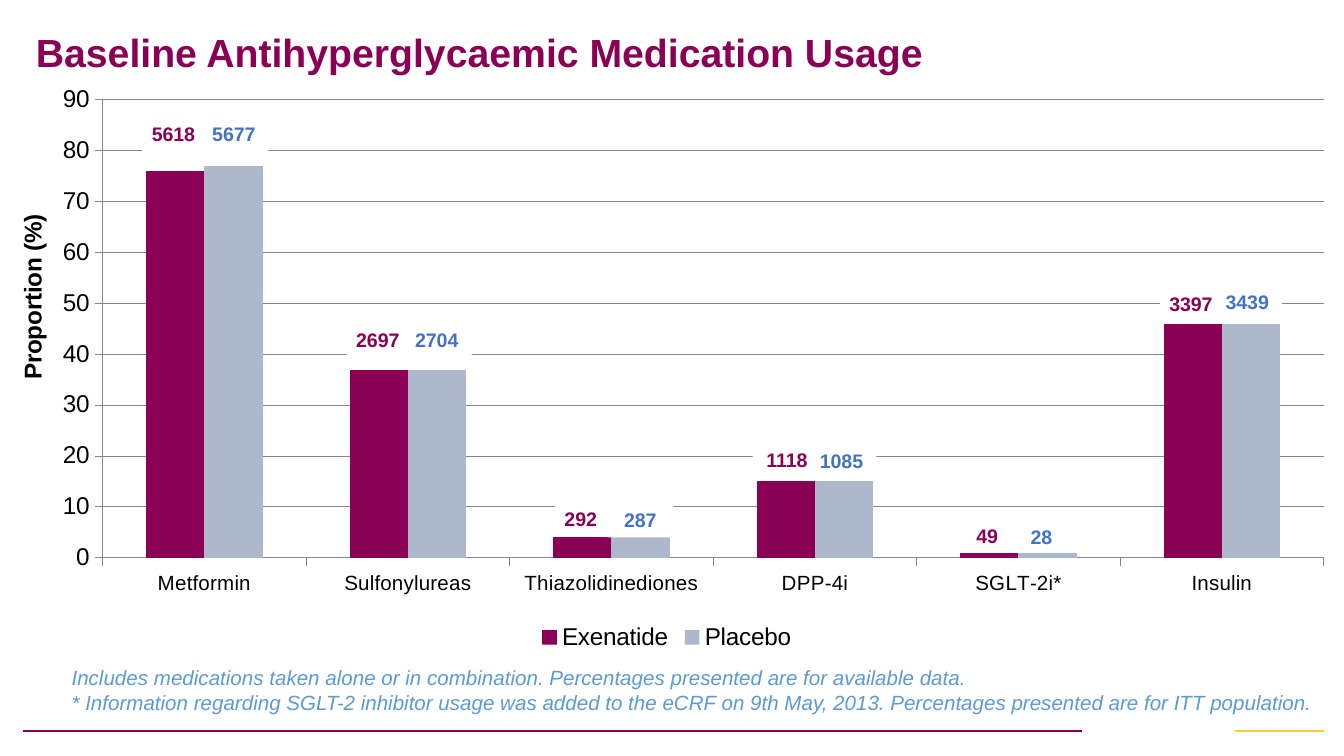
from lxml.etree import SubElement
from pptx import Presentation
from pptx.chart.data import CategoryChartData
from pptx.dml.color import RGBColor
from pptx.enum.chart import XL_CHART_TYPE as Chart, XL_LEGEND_POSITION as Legend, XL_TICK_MARK as Tick
from pptx.enum.shapes import MSO_CONNECTOR as Conn, MSO_SHAPE as Shape
from pptx.enum.text import MSO_ANCHOR as Anchor, PP_ALIGN as Align
from pptx.oxml.ns import qn
from pptx.util import Pt

# Content
TITLE = "Baseline Antihyperglycaemic Medication Usage"
AXIS_TITLE = "Proportion (%)"
NOTES = [
    "Includes medications taken alone or in combination. Percentages presented are for available data.",
    "* Information regarding SGLT-2 inhibitor usage was added to the eCRF on 9th May, 2013. "
    "Percentages presented are for ITT population.",
]
DRUGS = ["Metformin", "Sulfonylureas", "Thiazolidinediones", "DPP-4i", "SGLT-2i*", "Insulin"]
# Each count: text, left, top, width, alignment, masks the gridlines
L, C = Align.LEFT, Align.CENTER
ARMS = [
    dict(name="Exenatide", color="plum", text="plum", values=[76, 37, 4, 15, 1, 46], counts=[
        ("5618", 76.3, 62.6, 36.7, L, True),
        ("2697", 185.8, 172.8, 36.7, L, True),
        ("292", 297.4, 268.6, 36.7, L, True),
        ("1118", 403.2, 236.9, 36.7, C, True),
        ("49", 514.8, 277.9, 28.1, C, False),
        ("3397", 621.4, 153.4, 34.6, L, True),
    ]),
    dict(name="Placebo", color="grey_blue", text="blue", values=[77, 37, 4, 15, 1, 46], counts=[
        ("5677", 108.7, 62.6, 35.3, L, True),
        ("2704", 217.4, 172.8, 35.3, L, True),
        ("287", 325.4, 269.3, 35.3, C, True),
        ("1085", 434.2, 237.6, 35.3, L, True),
        ("28", 547.2, 278.6, 26.6, L, False),
        ("3439", 651.6, 152.6, 35.3, L, True),
    ]),
]
COUNT_HEIGHT = 18.7
RULES = [(12.2, 579.6, "plum"), (661.7, 709.2, "gold")]
RULE_TOP = 391.7
# Chart parts, as fractions of the chart's size
PLOT = dict(layoutTarget="inner", xMode="edge", yMode="edge", x=0.077, y=0.045, w=0.916, h=0.686)
LEGEND = dict(xMode="edge", yMode="edge", x=0.4, y=0.82, w=0.2, h=0.06)
AXIS_TITLE_PLACE = dict(xMode="edge", yMode="edge", x=0.01, y=0.21)

THEME = dict(
    font="Arial",
    colors=dict(plum="8A0054", grey_blue="ADB9CA", blue="4472C4", sky="5B9BD5",
                gold="FFCA38", white="FFFFFF", black="000000", grid="868686"),
    sizes=dict(title=21, chart=13, category=11, note=11, count=10.5),
)


def rgb(name):
    return RGBColor.from_string(THEME["colors"][name])


def style(font, size, color, **extra):
    values = dict(name=THEME["font"], size=Pt(THEME["sizes"][size]), **extra)
    for key, value in values.items():
        setattr(font, key, value)
    font.color.rgb = rgb(color)


def frame(sp, anchor=Anchor.TOP):
    tf = sp.text_frame
    values = dict(word_wrap=True, vertical_anchor=anchor, margin_left=Pt(5), margin_right=Pt(5),
                  margin_top=Pt(2.9), margin_bottom=Pt(2.9))
    for key, value in values.items():
        setattr(tf, key, value)
    return tf


def write(p, text, size, color, **extra):
    r = p.add_run()
    r.text = text
    style(r.font, size, color, **extra)


def box(*lengths):
    return [Pt(v) for v in lengths]


def place_part(element, index, settings):
    """Give a chart part a manual layout, as its child number index."""
    for old in element.findall(qn("c:layout")):
        element.remove(old)
    layout = SubElement(element, qn("c:layout"))
    element.insert(index, layout)
    manual = SubElement(layout, qn("c:manualLayout"))
    for tag, value in settings.items():
        SubElement(manual, qn("c:" + tag)).set("val", str(value))


prs = Presentation()
prs.slide_width, prs.slide_height = Pt(720), Pt(405)
slide = prs.slides.add_slide(prs.slide_layouts[5])
shapes = slide.shapes

# Title
title = shapes.title
title.left, title.top, title.width, title.height = box(14.2, 8.2, 620.6, 42.5)
p = frame(title, Anchor.MIDDLE).paragraphs[0]
p.alignment, p.line_spacing = L, 0.9
write(p, TITLE, "title", "plum", bold=True)

# Footer rules
for start, end, color in RULES:
    line = shapes.add_connector(Conn.STRAIGHT, *box(start, RULE_TOP, end, RULE_TOP))
    line.line.color.rgb, line.line.width = rgb(color), Pt(1)
    SubElement(line._element.spPr, qn("a:effectLst"))

# Notes
tf = frame(shapes.add_textbox(*box(33.4, 340.4, 686.6, 45.4)), Anchor.BOTTOM)
for i, note in enumerate(NOTES):
    p = tf.add_paragraph() if i else tf.paragraphs[0]
    write(p, note, "note", "sky", italic=True)

# Chart
data = CategoryChartData()
data.categories = DRUGS
for arm in ARMS:
    data.add_series(arm["name"], arm["values"])
chart = shapes.add_chart(Chart.COLUMN_CLUSTERED, *box(0, 37.4, 714.2, 357.8), data).chart
style(chart.font, "chart", "black")
chart.has_title = False
chart.has_legend = True
chart.legend.position, chart.legend.include_in_layout = Legend.BOTTOM, False
style(chart.legend.font, "chart", "black")

plot = chart.plots[0]
plot.gap_width, plot.overlap, plot.vary_by_categories = 150, 0, False
for series, arm in zip(plot.series, ARMS):
    series.format.fill.solid()
    series.format.fill.fore_color.rgb = rgb(arm["color"])

# Axes
cat_axis, val_axis = chart.category_axis, chart.value_axis
val_axis.minimum_scale, val_axis.maximum_scale, val_axis.major_unit = 0, 90, 10
val_axis.has_major_gridlines = True
for axis, size in ((cat_axis, "category"), (val_axis, "chart")):
    axis.major_tick_mark, axis.minor_tick_mark = Tick.OUTSIDE, Tick.NONE
    style(axis.tick_labels.font, size, "black")
for part in (cat_axis, val_axis, val_axis.major_gridlines):
    part.format.line.color.rgb, part.format.line.width = rgb("grid"), Pt(0.5)
axis_title = val_axis.axis_title
write(axis_title.text_frame.paragraphs[0], AXIS_TITLE, "chart", "black", bold=True)

# Fixed places for the plot, the legend and the axis title
place_part(chart._chartSpace.chart.plotArea, 0, PLOT)
place_part(chart.legend._element, 1, LEGEND)
place_part(axis_title._element, 1, AXIS_TITLE_PLACE)

# Patient counts above the columns, drug by drug
for pair in zip(*(arm["counts"] for arm in ARMS)):
    for arm, (text, left, top, width, align, masks) in zip(ARMS, pair):
        place = box(left, top, width, COUNT_HEIGHT)
        if masks:
            sp = shapes.add_shape(Shape.RECTANGLE, *place)
            sp.shadow.inherit = False
            sp.fill.solid()
            sp.fill.fore_color.rgb = rgb("white")
            sp.line.fill.background()
        else:
            sp = shapes.add_textbox(*place)
        p = frame(sp).paragraphs[0]
        p.alignment = align
        write(p, text, "count", arm["text"], bold=True)

prs.save("out.pptx")
